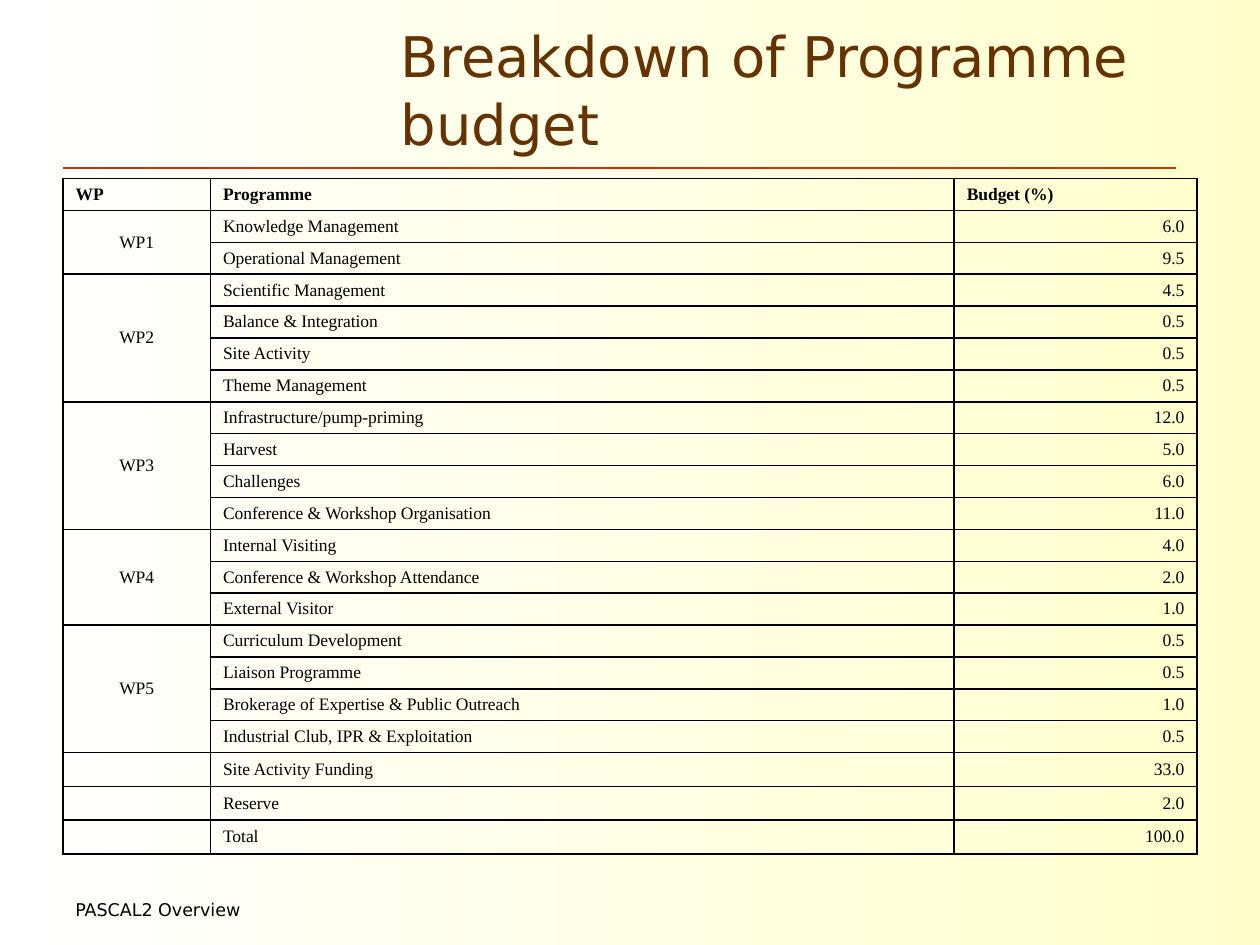
from dataclasses import dataclass

from lxml.etree import SubElement
from pptx import Presentation
from pptx.dml.color import RGBColor
from pptx.enum.shapes import MSO_CONNECTOR
from pptx.enum.text import MSO_ANCHOR, PP_ALIGN
from pptx.oxml.ns import qn
from pptx.util import Pt


@dataclass(frozen=True)
class Theme:
    sans: str = "DejaVu Sans"
    serif: str = "Times New Roman"
    ink: str = "000000"
    title: str = "663300"
    rule: str = "CC3300"
    back: tuple = ("FFFFFF", "FFFFCC")
    large: int = 32
    small: int = 10


THEME = Theme()
HEAD = ("WP", "Programme", "Budget (%)")
GROUPS = [
    ("WP1", [("Knowledge Management", "6.0"),
             ("Operational Management", "9.5")]),
    ("WP2", [("Scientific Management", "4.5"),
             ("Balance & Integration", "0.5"),
             ("Site Activity", "0.5"),
             ("Theme Management", "0.5")]),
    ("WP3", [("Infrastructure/pump-priming", "12.0"),
             ("Harvest", "5.0"),
             ("Challenges", "6.0"),
             ("Conference & Workshop Organisation", "11.0")]),
    ("WP4", [("Internal Visiting", "4.0"),
             ("Conference & Workshop Attendance", "2.0"),
             ("External Visitor", "1.0")]),
    ("WP5", [("Curriculum Development", "0.5"),
             ("Liaison Programme", "0.5"),
             ("Brokerage of Expertise & Public Outreach", "1.0"),
             ("Industrial Club, IPR & Exploitation", "0.5")]),
    ("", [("Site Activity Funding", "33.0")]),
    ("", [("Reserve", "2.0")]),
    ("", [("Total", "100.0")]),
]
COLS = (84.25, 425, 138.75)
ROW, LAST = 18.25, 19.3
ALIGN = (PP_ALIGN.CENTER, PP_ALIGN.LEFT, PP_ALIGN.RIGHT)


def apply(item, form):
    for name, value in form.items():
        setattr(item, name, value)


def write(para, text, face, size, color, bold=False):
    run = para.add_run()
    run.text = text
    apply(run.font, {"name": face, "size": Pt(size), "bold": bold})
    run.font.color.rgb = RGBColor.from_string(color)


def add_back(slide):
    fill = slide.background.fill
    fill.gradient()
    fill.gradient_angle = 0
    for stop, place, color in zip(fill.gradient_stops, (0, 1), THEME.back):
        stop.position = place
        stop.color.rgb = RGBColor.from_string(color)


def add_rule(slide, left, right, top):
    line = slide.shapes.add_connector(
        MSO_CONNECTOR.STRAIGHT, Pt(left), Pt(top), Pt(right), Pt(top))
    line.line.color.rgb = RGBColor.from_string(THEME.rule)
    line.line.width = Pt(1.5)
    SubElement(line._element.spPr, qn("a:effectLst"))


def add_label(slide, area, text, size, color, anchor):
    frame = slide.shapes.add_textbox(*map(Pt, area)).text_frame
    apply(frame, {"word_wrap": True, "vertical_anchor": anchor})
    write(frame.paragraphs[0], text, THEME.sans, size, color)


def add_border(cell):
    props = cell._tc.get_or_add_tcPr()
    for side in ("lnL", "lnR", "lnT", "lnB"):
        line = SubElement(props, qn(f"a:{side}"), w=str(Pt(1)))
        fill = SubElement(line, qn("a:solidFill"))
        SubElement(fill, qn("a:srgbClr"), val=THEME.ink)


def fill_cell(cell, text, align, bold=False):
    apply(cell, {"vertical_anchor": MSO_ANCHOR.MIDDLE,
                 "margin_top": Pt(3), "margin_bottom": Pt(3)})
    para = cell.text_frame.paragraphs[0]
    para.alignment = align
    props = para._p.get_or_add_pPr()
    props.set("marL", str(Pt(27)))
    props.set("indent", str(Pt(-27)))
    if text:
        write(para, text, THEME.serif, THEME.small, THEME.ink, bold)
    else:
        # Keep empty cells from stretching their row
        SubElement(para._p, qn("a:endParaRPr"), sz=str(THEME.small * 100))


def add_budget(slide):
    rows = [HEAD] + [(name if i == 0 else "", *item)
                     for name, items in GROUPS
                     for i, item in enumerate(items)]
    sizes = [ROW] * (len(rows) - 3) + [LAST] * 3
    table = slide.shapes.add_table(
        len(rows), len(COLS), Pt(36), Pt(102),
        Pt(sum(COLS)), Pt(sum(sizes))).table
    apply(table, {"first_row": False, "horz_banding": False})
    for col, width in zip(table.columns, COLS):
        col.width = Pt(width)
    for row, height in zip(table.rows, sizes):
        row.height = Pt(height)

    # Cell text and borders
    for r, row in enumerate(rows):
        for c, text in enumerate(row):
            cell = table.cell(r, c)
            align = ALIGN[c] if r else PP_ALIGN.LEFT
            fill_cell(cell, text, align, bold=r == 0)
            add_border(cell)
            cell.fill.background()

    # One tall cell for each work package
    top = 1
    for _, items in GROUPS:
        end = top + len(items) - 1
        if end > top:
            table.cell(top, 0).merge(table.cell(end, 0))
        top = end + 1


def main():
    deck = Presentation()
    apply(deck, {"slide_width": Pt(720), "slide_height": Pt(540)})
    slide = deck.slides.add_slide(deck.slide_layouts[6])
    add_back(slide)

    # Heading
    add_rule(slide, 36, 672, 96)
    add_label(slide, (222, 12, 462, 78), "Breakdown of Programme budget",
              THEME.large, THEME.title, MSO_ANCHOR.MIDDLE)

    # Budget and footer
    add_budget(slide)
    add_label(slide, (36, 510, 510, 18), "PASCAL2 Overview",
              THEME.small, THEME.ink, MSO_ANCHOR.TOP)
    deck.save("out.pptx")


if __name__ == "__main__":
    main()
